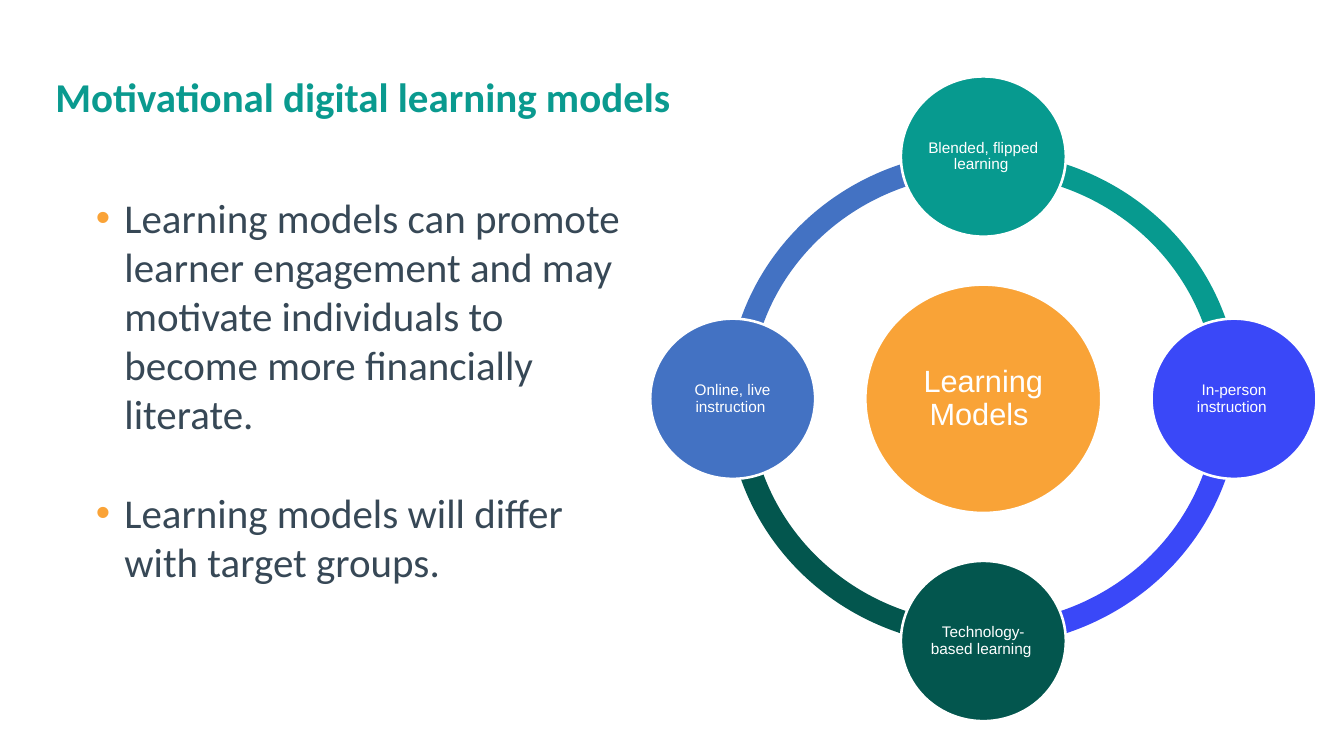
import math
from dataclasses import dataclass

import pptx
import pptx.dml.color
import pptx.enum.shapes
import pptx.enum.text
import pptx.oxml
import pptx.oxml.ns
import pptx.shapes.autoshape
import pptx.slide
import pptx.text.text
import pptx.util

Inches = pptx.util.Inches
Pt = pptx.util.Pt
MSO_SHAPE = pptx.enum.shapes.MSO_SHAPE
PP_ALIGN = pptx.enum.text.PP_ALIGN
MSO_ANCHOR = pptx.enum.text.MSO_ANCHOR


@dataclass(frozen=True)
class Theme:
    title: str = "0A9A8F"
    body: str = "374856"
    bullet: str = "FAA337"
    hub: str = "F9A337"
    white: str = "FFFFFF"
    text_font: str = "Calibri"
    diagram_font: str = "Arial"
    text_size: int = 32
    hub_size: int = 24
    model_size: int = 12


@dataclass(frozen=True)
class LearningModel:
    """A circle on the ring; its arc runs clockwise from it for a quarter turn."""
    label: str
    color: str
    angle: int


THEME = Theme()
SLIDE_WIDTH, SLIDE_HEIGHT = 175 / 12, 98.5 / 12
CENTER_X, CENTER_Y = 10.67, 4.33
ORBIT_X, ORBIT_Y = 2.72, 2.63
RING_WIDTH, RING_HEIGHT = 5.56, 5.38
RING_PERCENT = 4.6
MODEL_WIDTH, MODEL_HEIGHT = 1.79, 1.74
HUB_WIDTH, HUB_HEIGHT = 2.56, 2.48

MODELS = [
    LearningModel("Blended, flipped learning ", "079A8F", 270),
    LearningModel("In-person instruction ", "3A48F8", 0),
    LearningModel("Technology-based learning ", "03564E", 90),
    LearningModel("Online, live instruction ", "4372C3", 180),
]
POINTS = [
    "Learning models can promote learner engagement and may motivate "
    "individuals to become more financially literate.",
    "Learning models will differ with target groups.",
]


def rgb(color: str) -> pptx.dml.color.RGBColor:
    return pptx.dml.color.RGBColor.from_string(color)


def add_run(paragraph: pptx.text.text._Paragraph, text: str, font: str,
            size: int, color: str, bold: bool = False) -> None:
    run = paragraph.add_run()
    run.text = text
    run.font.name = font
    run.font.size = Pt(size)
    run.font.bold = bold
    run.font.color.rgb = rgb(color)


def set_margins(frame: pptx.text.text.TextFrame, side: float, top: float) -> None:
    frame.margin_left = frame.margin_right = Inches(side)
    frame.margin_top = frame.margin_bottom = Inches(top)


def place(shape: pptx.shapes.autoshape.Shape, left: float, top: float,
          width: float, height: float) -> None:
    shape.left, shape.top = Inches(left), Inches(top)
    shape.width, shape.height = Inches(width), Inches(height)


def set_bullet(paragraph: pptx.text.text._Paragraph) -> None:
    properties = paragraph._p.get_or_add_pPr()
    properties.set("marL", str(Inches(0.31)))
    properties.set("indent", str(-Inches(0.31)))
    namespace = pptx.oxml.ns.nsdecls("a")
    for xml in (
        f'<a:buClr {namespace}><a:srgbClr val="{THEME.bullet}"/></a:buClr>',
        f'<a:buFont {namespace} typeface="Arial"/>',
        f'<a:buChar {namespace} char="•"/>',
    ):
        properties.append(pptx.oxml.parse_xml(xml))


def write_title(slide: pptx.slide.Slide) -> None:
    title = slide.shapes.title
    place(title, 0.55, 0.68, 13.48, 0.79)
    frame = title.text_frame
    set_margins(frame, 0.05, 0.05)
    frame.vertical_anchor = MSO_ANCHOR.MIDDLE
    heading = frame.paragraphs[0]
    heading.alignment = PP_ALIGN.LEFT
    heading.line_spacing = 0.9
    add_run(heading, "Motivational digital learning models", THEME.text_font,
            THEME.text_size, THEME.title, bold=True)


def write_points(slide: pptx.slide.Slide) -> None:
    body = slide.placeholders[1]
    place(body, 0.94, 2.04, 5.98, 5.12)
    frame = body.text_frame
    set_margins(frame, 0.1, 0.05)
    frame.auto_size = pptx.enum.text.MSO_AUTO_SIZE.NONE
    frame.vertical_anchor = MSO_ANCHOR.TOP
    for index, point in enumerate(POINTS):
        paragraph = frame.add_paragraph() if index else frame.paragraphs[0]
        paragraph.space_before = Pt(38.5 if index else 0)
        set_bullet(paragraph)
        add_run(paragraph, point, THEME.text_font, THEME.text_size, THEME.body)


def add_centered(slide: pptx.slide.Slide, kind: MSO_SHAPE, x: float, y: float,
                 width: float, height: float,
                 color: str) -> pptx.shapes.autoshape.Shape:
    """Add a filled shape whose middle is at x, y."""
    shape = slide.shapes.add_shape(
        kind, Inches(x - width / 2), Inches(y - height / 2),
        Inches(width), Inches(height))
    shape.shadow.inherit = False
    shape.fill.solid()
    shape.fill.fore_color.rgb = rgb(color)
    shape.line.fill.background()
    return shape


def add_arc(slide: pptx.slide.Slide, model: LearningModel) -> None:
    arc = add_centered(slide, MSO_SHAPE.BLOCK_ARC, CENTER_X, CENTER_Y,
                       RING_WIDTH, RING_HEIGHT, model.color)
    # Angles are stored in 60000ths of a degree, adjustments in 100000ths.
    arc.adjustments[0] = model.angle * 0.6
    arc.adjustments[1] = (model.angle + 90) % 360 * 0.6
    arc.adjustments[2] = RING_PERCENT / 100


def add_circle(slide: pptx.slide.Slide, label: str, color: str, x: float,
               y: float, width: float, height: float, size: int) -> None:
    circle = add_centered(slide, MSO_SHAPE.OVAL, x, y, width, height, color)
    circle.line.color.rgb = rgb(THEME.white)
    circle.line.width = Pt(2)
    frame = circle.text_frame
    set_margins(frame, 0.02, 0.02)
    frame.word_wrap = True
    frame.vertical_anchor = MSO_ANCHOR.MIDDLE
    paragraph = frame.paragraphs[0]
    paragraph.alignment = PP_ALIGN.CENTER
    paragraph.line_spacing = 0.9
    add_run(paragraph, label, THEME.diagram_font, size, THEME.white)


def draw_cycle(slide: pptx.slide.Slide) -> None:
    for model in reversed(MODELS):
        add_arc(slide, model)
    add_circle(slide, "Learning Models ", THEME.hub, CENTER_X, CENTER_Y,
               HUB_WIDTH, HUB_HEIGHT, THEME.hub_size)
    for model in MODELS:
        turn = math.radians(model.angle)
        add_circle(slide, model.label, model.color,
                   CENTER_X + ORBIT_X * math.cos(turn),
                   CENTER_Y + ORBIT_Y * math.sin(turn),
                   MODEL_WIDTH, MODEL_HEIGHT, THEME.model_size)


def main() -> None:
    presentation = pptx.Presentation()
    presentation.slide_width = Inches(SLIDE_WIDTH)
    presentation.slide_height = Inches(SLIDE_HEIGHT)
    slide = presentation.slides.add_slide(presentation.slide_layouts[1])
    write_title(slide)
    write_points(slide)
    draw_cycle(slide)
    presentation.save("out.pptx")


if __name__ == "__main__":
    main()
